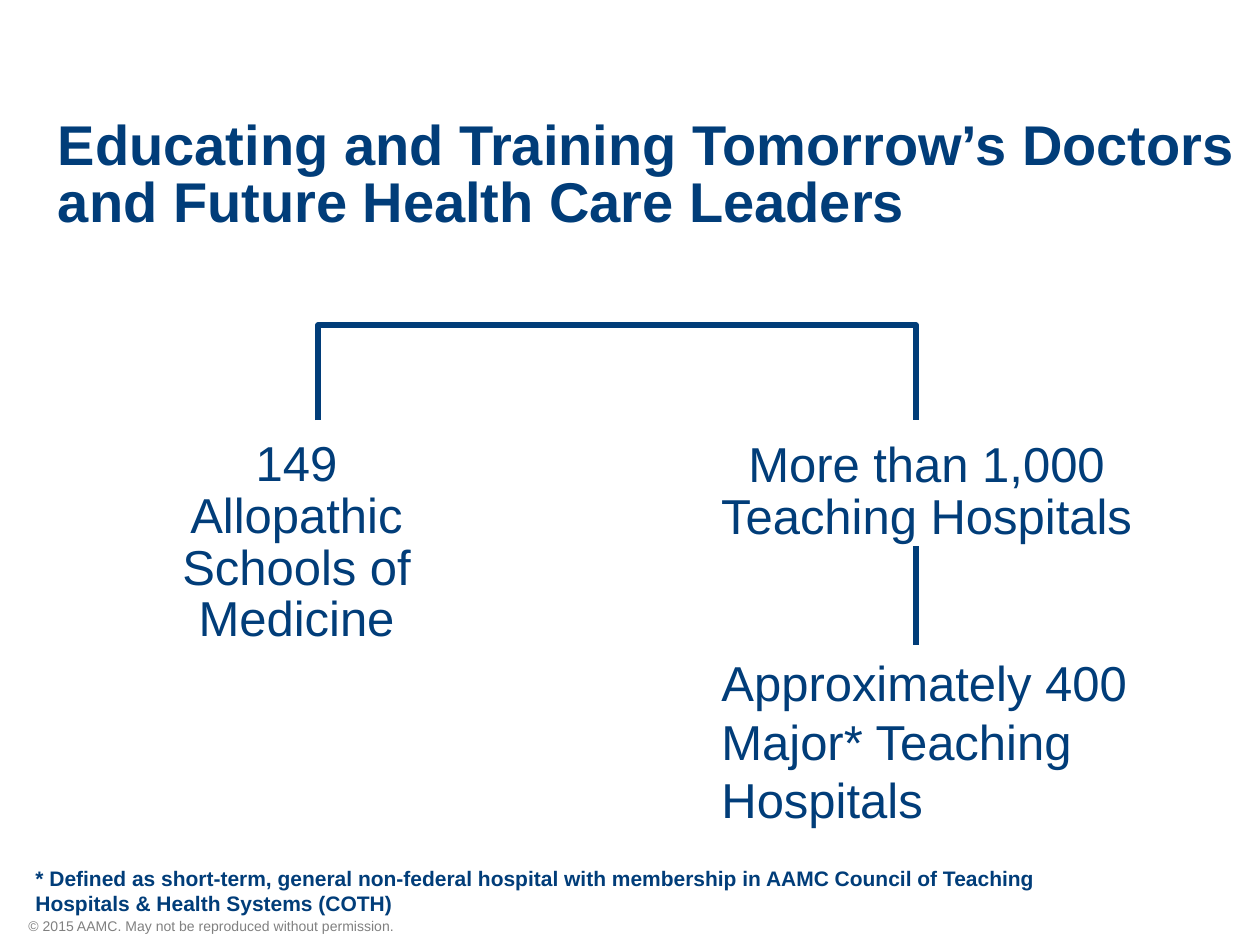
from dataclasses import dataclass

from lxml.etree import SubElement
from pptx import Presentation
from pptx.dml.color import RGBColor
from pptx.enum.shapes import MSO_CONNECTOR as Connector
from pptx.enum.text import MSO_ANCHOR as Anchor, MSO_AUTO_SIZE as AutoSize, PP_ALIGN as Align
from pptx.oxml.ns import qn
from pptx.util import Pt

EMU_PER_PX = 914400 / 126


@dataclass(frozen=True)
class Theme:
    font: str = "Arial"
    navy: RGBColor = RGBColor(0x01, 0x3D, 0x79)
    grey: RGBColor = RGBColor(0x80, 0x80, 0x80)
    title: int = 32
    body: int = 28
    note: int = 12
    copyright: int = 8
    line: int = 3


THEME = Theme()


def px(length):
    return round(length * EMU_PER_PX)


def write(box, text, size=THEME.body, color=THEME.navy, bold=False, align=Align.LEFT,
          spacing=1.0, anchor=Anchor.TOP, inset=True):
    frame = box.text_frame
    frame.word_wrap = True
    frame.auto_size = AutoSize.NONE
    frame.vertical_anchor = anchor
    if not inset:
        frame.margin_left = frame.margin_right = frame.margin_top = frame.margin_bottom = 0
    para = frame.paragraphs[0]
    para.alignment = align
    para.line_spacing = spacing
    para.space_before = Pt(0)
    span = para.add_run()
    span.text = text
    font = span.font
    font.name, font.size, font.bold = THEME.font, Pt(size), bold
    font.color.rgb = color


def add_text(page, bounds, text, **style):
    box = page.shapes.add_textbox(*map(px, bounds))
    write(box, text, **style)


def fill_placeholder(box, bounds, text, **style):
    box.left, box.top, box.width, box.height = map(px, bounds)
    write(box, text, inset=False, **style)


def remove_bullet(box):
    properties = box.text_frame.paragraphs[0]._p.get_or_add_pPr()
    properties.set("marL", "0")
    properties.set("indent", "0")
    SubElement(properties, qn("a:buNone"))


def style_line(line):
    line.color.rgb = THEME.navy
    line.width = Pt(THEME.line)


def add_bracket(page, left, top, right, bottom):
    builder = page.shapes.build_freeform(left, bottom, scale=EMU_PER_PX)
    builder.add_line_segments([(left, top), (right, top), (right, bottom)], close=False)
    bracket = builder.convert_to_shape()
    bracket.shadow.inherit = False
    bracket.fill.background()
    style_line(bracket.line)


def add_stem(page, x, start, end):
    stem = page.shapes.add_connector(Connector.STRAIGHT, px(x), px(start), px(x), px(end))
    SubElement(stem._element.spPr, qn("a:effectLst"))
    style_line(stem.line)


def main():
    deck = Presentation()
    deck.slide_width, deck.slide_height = px(1260), px(945)
    page = deck.slides.add_slide(deck.slide_layouts[1])
    title, schools = page.shapes.title, page.placeholders[1]

    add_text(page, (16, 911, 777, 29), "© 2015 AAMC. May not be reproduced without permission.",
             size=THEME.copyright, color=THEME.grey)
    fill_placeholder(title, (58, 140, 1202, 94),
                     "Educating and Training Tomorrow’s Doctors and Future Health Care Leaders",
                     size=THEME.title, bold=True, spacing=0.85, anchor=Anchor.BOTTOM)
    remove_bullet(schools)
    fill_placeholder(schools, (154, 440, 285, 218), "149 Allopathic Schools of Medicine",
                     align=Align.CENTER, spacing=0.88)
    add_text(page, (696, 435, 461, 179), "More than 1,000 Teaching Hospitals",
             align=Align.CENTER, spacing=0.88)

    hospital_axis = 916
    add_bracket(page, 318, 325, hospital_axis, 420)
    add_stem(page, hospital_axis, 645, 546)

    add_text(page, (709, 646, 449, 189), "Approximately 400 Major* Teaching Hospitals")
    add_text(page, (23, 859, 1091, 63),
             "* Defined as short-term, general non-federal hospital with membership in "
             "AAMC Council of Teaching Hospitals & Health Systems (COTH)",
             size=THEME.note, bold=True)
    deck.save("out.pptx")


if __name__ == "__main__":
    main()
